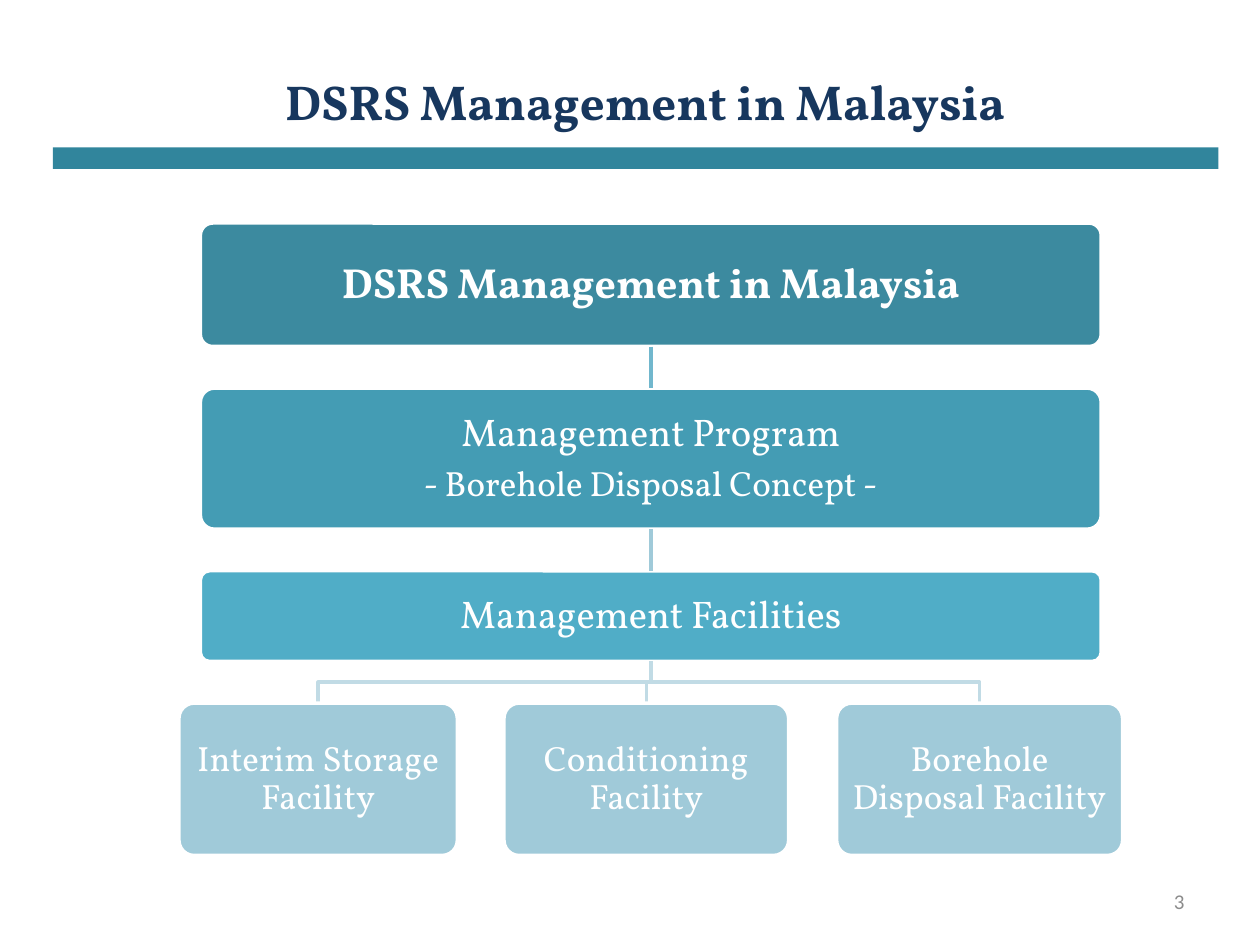
from pptx import Presentation
from pptx.dml.color import RGBColor
from pptx.enum.shapes import MSO_CONNECTOR, MSO_SHAPE
from pptx.enum.text import MSO_ANCHOR, PP_ALIGN
from pptx.oxml.ns import qn
from pptx.util import Inches, Pt
from lxml import etree

RECTANGLE, ROUNDED = MSO_SHAPE.RECTANGLE, MSO_SHAPE.ROUNDED_RECTANGLE
STRAIGHT = MSO_CONNECTOR.STRAIGHT
CENTER, RIGHT = PP_ALIGN.CENTER, PP_ALIGN.RIGHT
MIDDLE = MSO_ANCHOR.MIDDLE
BOTTOM_SIDE, TOP_SIDE = 2, 0

NAVY = RGBColor(0x17, 0x37, 0x5E)
TEAL = RGBColor(0x31, 0x85, 0x9C)
GRAY = RGBColor(0x8C, 0x8C, 0x8C)
WHITE = RGBColor(0xFF, 0xFF, 0xFF)
LEVEL_1 = RGBColor(0x3C, 0x8A, 0x9F)
LEVEL_2 = RGBColor(0x44, 0x9C, 0xB4)
LEVEL_3 = RGBColor(0x50, 0xAD, 0xC7)
LEVEL_4 = RGBColor(0xA0, 0xCA, 0xD9)
LINK_1 = RGBColor(0x71, 0xB7, 0xCD)
LINK_3 = RGBColor(0xC1, 0xDB, 0xE5)


class HierarchySlide:
    """Holds the chart style and the slide, and draws each kind of element."""

    font = "Vollkorn"
    line_width = Pt(2)
    box_inset = Inches(0.09)

    def __init__(self, presentation):
        self.slide = presentation.slides.add_slide(presentation.slide_layouts[5])
        self.shapes = self.slide.shapes

    def text_run(self, paragraph, text, size, color, bold=False, font=None, align=CENTER):
        paragraph.alignment = align
        run = paragraph.add_run()
        run.text = text
        run.font.name = font or self.font
        run.font.size = Pt(size)
        run.font.bold = bold
        run.font.color.rgb = color

    def title(self, text, left, top, width, height):
        heading = self.shapes.title
        heading.left, heading.top = Inches(left), Inches(top)
        heading.width, heading.height = Inches(width), Inches(height)
        frame = heading.text_frame
        frame.vertical_anchor = MIDDLE
        frame.margin_left = Inches(0.39)
        self.text_run(frame.paragraphs[0], text, 28, NAVY, bold=True)

    def page_number(self, text, left, top, width, height):
        number = self.shapes.add_textbox(
            Inches(left), Inches(top), Inches(width), Inches(height))
        frame = number.text_frame
        frame.word_wrap = True
        frame.vertical_anchor = MIDDLE
        self.text_run(frame.paragraphs[0], text, 12, GRAY, font="Calibri", align=RIGHT)

    def bar(self, left, top, width, height, fill, kind=RECTANGLE):
        shape = self.shapes.add_shape(
            kind, Inches(left), Inches(top), Inches(width), Inches(height))
        shape.shadow.inherit = False
        shape.fill.solid()
        shape.fill.fore_color.rgb = fill
        shape.line.fill.background()
        return shape

    def box(self, left, top, width, height, fill, lines, bold=False):
        box = self.bar(left, top, width, height, fill, ROUNDED)
        box.adjustments[0] = 0.1
        box.line.color.rgb = WHITE
        box.line.width = self.line_width
        frame = box.text_frame
        frame.word_wrap = True
        frame.vertical_anchor = MIDDLE
        frame.margin_left = frame.margin_right = self.box_inset
        frame.margin_top = frame.margin_bottom = self.box_inset
        for index, (text, size) in enumerate(lines):
            paragraph = frame.add_paragraph() if index else frame.paragraphs[0]
            paragraph.line_spacing = 0.9
            paragraph.space_before = Pt(7 if index else 0)
            self.text_run(paragraph, text, size, WHITE, bold)
        return box

    def link(self, parent, child, color):
        link = self.shapes.add_connector(STRAIGHT, 0, 0, 0, 0)
        link.begin_connect(parent, BOTTOM_SIDE)
        link.end_connect(child, TOP_SIDE)
        link.line.color.rgb = color
        link.line.width = self.line_width
        etree.SubElement(link._element.spPr, qn("a:effectLst"))

    def branch(self, parent, end_x, end_y, color):
        start_x = parent.left + parent.width // 2
        start_y = parent.top + parent.height
        bend_y = (start_y + Inches(end_y)) // 2
        builder = self.shapes.build_freeform(start_x, start_y)
        builder.add_line_segments(
            [(start_x, bend_y), (Inches(end_x), bend_y), (Inches(end_x), Inches(end_y))],
            close=False)
        branch = builder.convert_to_shape()
        branch.shadow.inherit = False
        branch.fill.background()
        branch.line.color.rgb = color
        branch.line.width = self.line_width


def main():
    presentation = Presentation()
    presentation.slide_width, presentation.slide_height = Inches(10), Inches(7.5)
    chart = HierarchySlide(presentation)
    chart.title("DSRS Management in Malaysia", 0.28, 0.33, 9.39, 0.94)
    chart.page_number("3", 7.17, 6.95, 2.33, 0.4)

    left, width = 1.59, 7.15
    management = chart.box(left, 1.77, width, 0.98, LEVEL_1,
                           [("DSRS Management in Malaysia", 24)], bold=True)
    program = chart.box(left, 3.08, width, 1.12, LEVEL_2,
                        [("Management Program", 22),
                         ("- Borehole Disposal Concept -", 20)])
    facilities = chart.box(left, 4.53, width, 0.72, LEVEL_3,
                           [("Management Facilities", 22)])
    chart.link(management, program, LINK_1)
    chart.link(program, facilities, LEVEL_4)

    facility_top = 5.58
    facility_boxes = [
        ("Interim Storage Facility", 1.42, 2.21),
        ("Conditioning Facility", 4, 2.26),
        ("Borehole Disposal Facility", 6.64, 2.27),
    ]
    for name, facility_left, facility_width in facility_boxes:
        chart.branch(facilities, facility_left + facility_width / 2, facility_top, LINK_3)
        chart.box(facility_left, facility_top, facility_width, 1.21, LEVEL_4, [(name, 20)])

    chart.bar(0.42, 1.17, 9.25, 0.17, TEAL)
    presentation.save("out.pptx")


if __name__ == "__main__":
    main()
